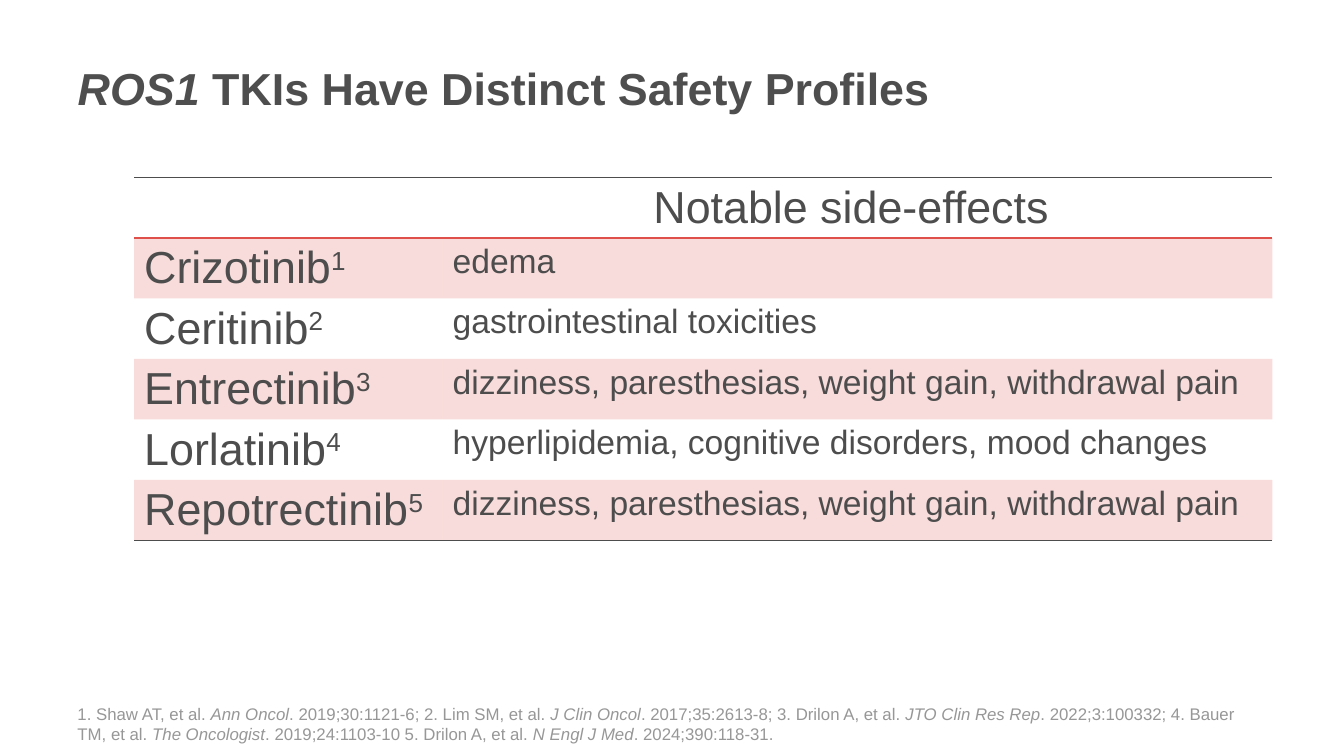
from lxml.etree import SubElement
from pptx import Presentation
from pptx.dml.color import RGBColor
from pptx.enum.text import MSO_ANCHOR as ANCHOR, PP_ALIGN as ALIGN
from pptx.oxml import parse_xml
from pptx.oxml.ns import nsdecls, qn

PX = 9144  # 100 px to the inch
FONT = "Arial"
TITLE_GRAY = RGBColor(0x4D, 0x4E, 0x4D)
TEXT_GRAY = RGBColor(0x4D, 0x4D, 0x4D)
NOTE_GRAY = RGBColor(0x97, 0x97, 0x97)
RED = RGBColor(0xDF, 0x50, 0x4B)
NO_GRID_STYLE = "{2D5ABB26-0587-4C30-8999-92F81FD0307C}"
PLAIN, ITALIC, SUPER = range(3)

COLUMN_WIDTHS = [306, 823]
ROW_HEIGHT = 60
SIDE_EFFECTS = [
    ("Crizotinib", "edema"),
    ("Ceritinib", "gastrointestinal toxicities"),
    ("Entrectinib", "dizziness, paresthesias, weight gain, withdrawal pain"),
    ("Lorlatinib", "hyperlipidemia, cognitive disorders, mood changes"),
    ("Repotrectinib", "dizziness, paresthesias, weight gain, withdrawal pain"),
]
REFERENCES = [
    ("1. Shaw AT, et al. ", PLAIN), ("Ann Oncol", ITALIC),
    (". 2019;30:1121-6; 2. Lim SM, et al. ", PLAIN), ("J Clin Oncol", ITALIC),
    (". 2017;35:2613-8; 3. Drilon A, et al. ", PLAIN), ("JTO Clin Res Rep", ITALIC),
    (". 2022;3:100332; 4. Bauer TM, et al. ", PLAIN), ("The Oncologist", ITALIC),
    (". 2019;24:1103-10 5. Drilon A, et al. ", PLAIN), ("N Engl J Med", ITALIC),
    (". 2024;390:118-31.", PLAIN),
]


def write(frame, runs, size, color=TEXT_GRAY, bold=False, align=ALIGN.LEFT):
    """Fill the first paragraph with (text, style) runs."""
    paragraph = frame.paragraphs[0]
    paragraph.alignment = align
    for text, style in runs:
        run = paragraph.add_run()
        run.text = text
        run.font.name = FONT
        run.font.size = size * 12700
        run.font.bold = bold
        run.font.italic = style == ITALIC
        run.font.color.rgb = color
        if style == SUPER:
            run.font._element.set("baseline", "30000")


def place(shape, left, top, width, height):
    shape.left, shape.top = left * PX, top * PX
    shape.width, shape.height = width * PX, height * PX


def tint(cell):
    """Fill the cell with red at 20% opacity."""
    cell.fill.solid()
    cell.fill.fore_color.rgb = RED
    color = cell._tc.tcPr.find(qn("a:solidFill"))[0]
    SubElement(color, qn("a:alpha")).set("val", "20000")


def rule(cell, side, color, width):
    """Draw one border; side is T or B."""
    cell._tc.get_or_add_tcPr().insert(0, parse_xml(
        f'<a:ln{side} {nsdecls("a")} w="{width}"><a:solidFill>'
        f'<a:srgbClr val="{color}"/></a:solidFill></a:ln{side}>'))


def add_title(slide):
    title = slide.shapes.title
    place(title, 67, 22, 1175, 130)
    title.text_frame.vertical_anchor = ANCHOR.MIDDLE
    write(title.text_frame,
          [("ROS1", ITALIC), (" TKIs Have Distinct Safety Profiles", PLAIN)],
          32, TITLE_GRAY, bold=True)


def add_safety_table(slide):
    row_count = len(SIDE_EFFECTS) + 1
    table = slide.shapes.add_table(
        row_count, 2, 133 * PX, 176 * PX,
        sum(COLUMN_WIDTHS) * PX, row_count * ROW_HEIGHT * PX).table
    table._tbl.tblPr.find(qn("a:tableStyleId")).text = NO_GRID_STYLE
    table.horz_banding = False
    for column, width in zip(table.columns, COLUMN_WIDTHS):
        column.width = width * PX

    write(table.cell(0, 1).text_frame, [("Notable side-effects ", PLAIN)],
          32, align=ALIGN.CENTER)
    for number, (drug, effects) in enumerate(SIDE_EFFECTS, 1):
        drug_cell, effects_cell = table.rows[number].cells
        drug_cell.vertical_anchor = ANCHOR.MIDDLE
        write(drug_cell.text_frame, [(drug, PLAIN), (str(number), SUPER)], 32)
        write(effects_cell.text_frame, [(effects, PLAIN)], 24)

    for index, row in enumerate(table.rows):
        for cell in row.cells:
            if index % 2:
                tint(cell)
            else:
                cell.fill.background()
            if index == 0:
                rule(cell, "B", RED, 19050)
                rule(cell, "T", TEXT_GRAY, 9525)
            elif index == row_count - 1:
                rule(cell, "B", TEXT_GRAY, 9525)


def add_references(slide):
    box = slide.shapes.add_textbox(0, 0, 0, 0)
    place(box, 67, 695, 1175, 48)
    box.text_frame.word_wrap = True
    box.text_frame.vertical_anchor = ANCHOR.BOTTOM
    write(box.text_frame, REFERENCES, 12, NOTE_GRAY)


def main():
    deck = Presentation()
    deck.slide_width, deck.slide_height = 1333 * PX, 750 * PX
    slide = deck.slides.add_slide(deck.slide_layouts[5])
    add_safety_table(slide)
    add_title(slide)
    add_references(slide)
    deck.save("out.pptx")


if __name__ == "__main__":
    main()
